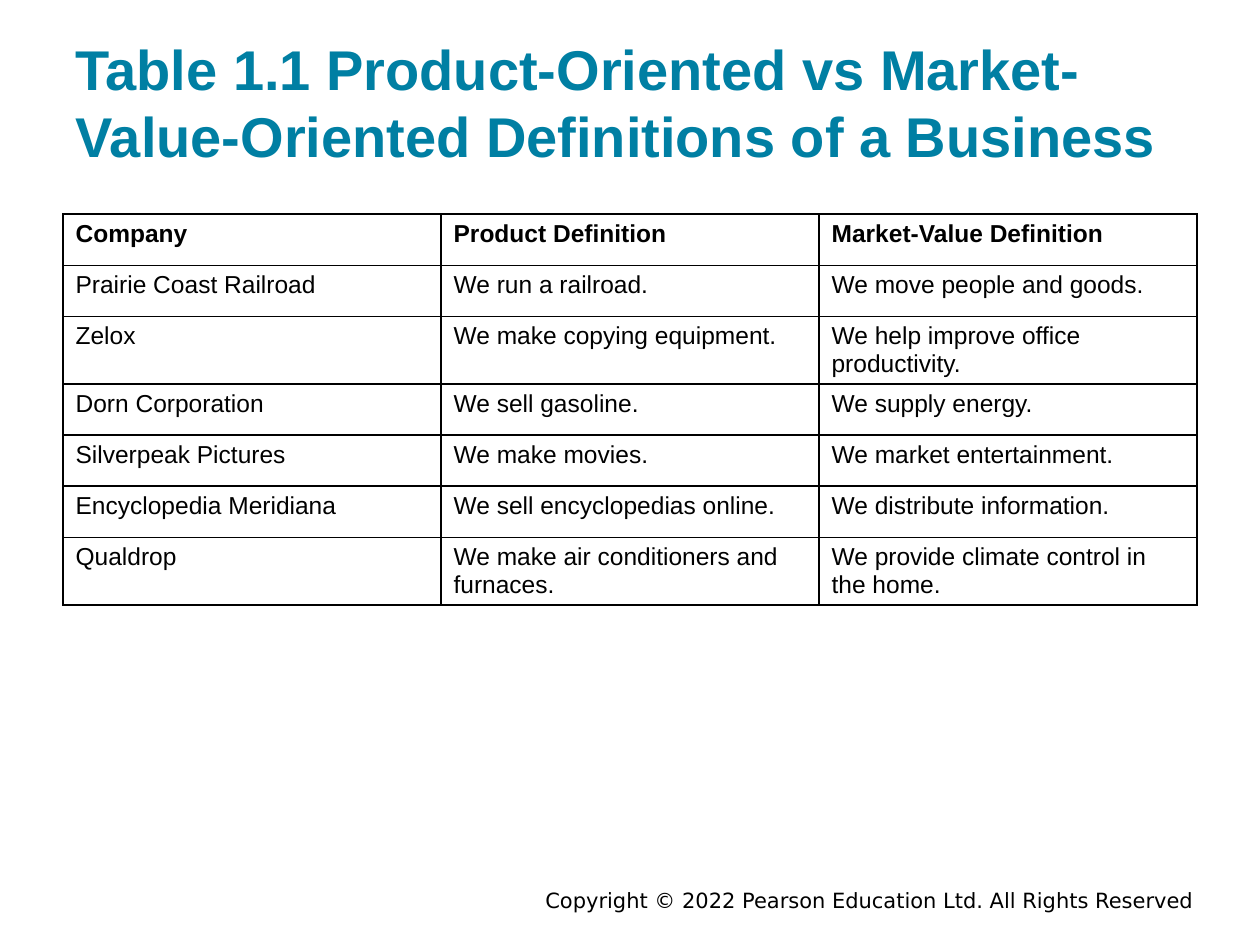
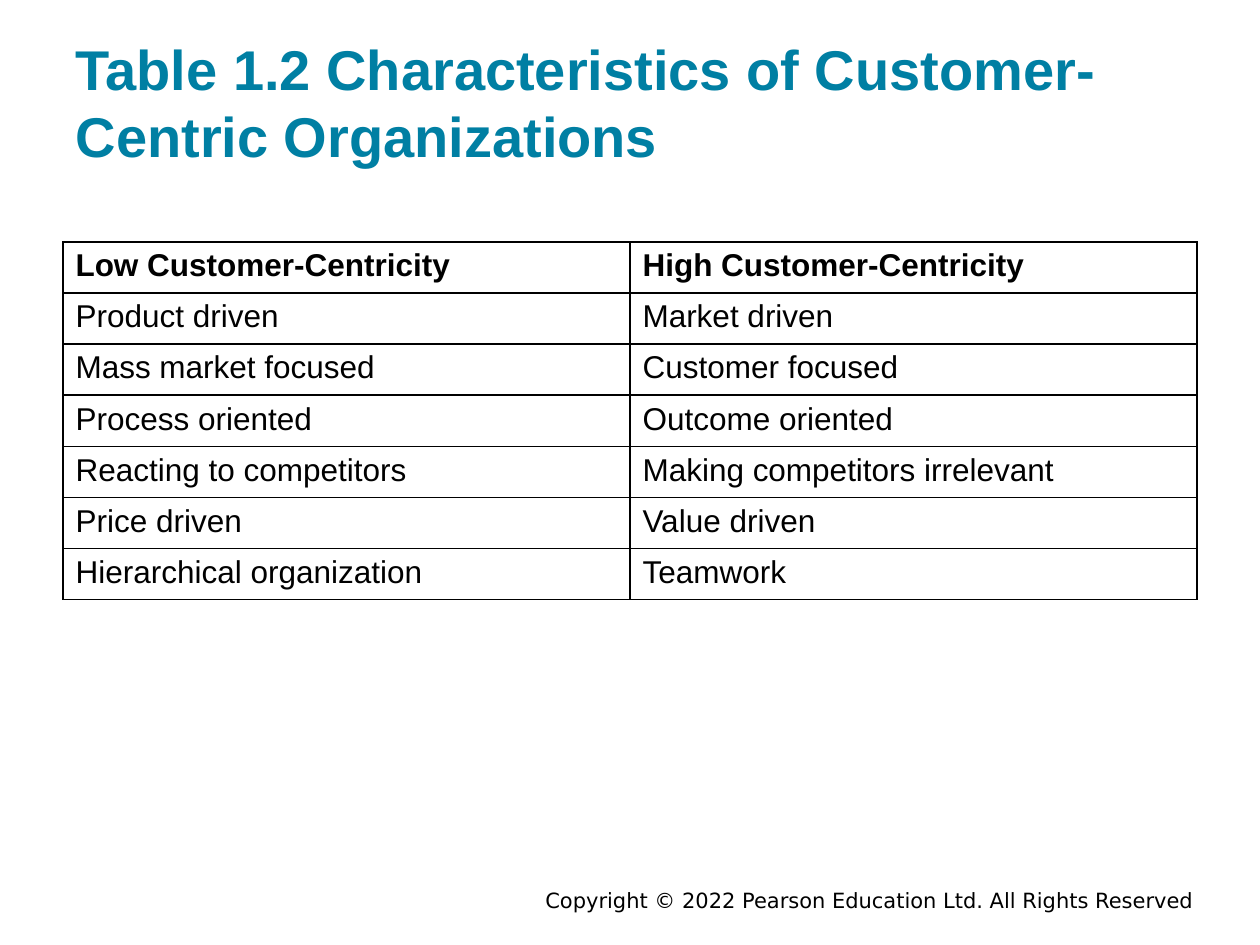
from dataclasses import dataclass
from lxml.etree import SubElement
from pptx import Presentation
from pptx.dml.color import RGBColor
from pptx.enum.text import MSO_ANCHOR, MSO_AUTO_SIZE, PP_ALIGN
from pptx.oxml.ns import qn
from pptx.util import Inches, Pt


@dataclass(frozen=True)
class Theme:
    teal: str = "007FA3"
    black: str = "000000"
    font: str = "Arial"
    foot_font: str = "DejaVu Sans"
    title: int = 32
    foot: int = 12
    rule: int = 1


theme = Theme()
LEFT, WIDE, TALL = 0.5, 9, 2.84
FOOT = "Copyright © 2022 Pearson Education Ltd. All Rights Reserved"

SLIDES = [
    dict(title="Table 1.1 Product-Oriented vs Market-Value-Oriented Definitions of a Business",
         top=1.7, size=14, rows=[
             ("Company", "Product Definition", "Market-Value Definition"),
             ("Prairie Coast Railroad", "We run a railroad.", "We move people and goods."),
             ("Zelox", "We make copying equipment.", "We help improve office productivity."),
             ("Dorn Corporation", "We sell gasoline.", "We supply energy."),
             ("Silverpeak Pictures", "We make movies.", "We market entertainment."),
             ("Encyclopedia Meridiana", "We sell encyclopedias online.",
              "We distribute information."),
             ("Qualdrop", "We make air conditioners and furnaces.",
              "We provide climate control in the home."),
         ]),
    dict(title="Table 1.2 Characteristics of Customer-Centric Organizations",
         top=1.92, size=18, rows=[
             ("Low Customer-Centricity", "High Customer-Centricity"),
             ("Product driven", "Market driven"),
             ("Mass market focused", "Customer focused"),
             ("Process oriented", "Outcome oriented"),
             ("Reacting to competitors", "Making competitors irrelevant"),
             ("Price driven", "Value driven"),
             ("Hierarchical organization", "Teamwork"),
         ]),
]


def write(frame, text, size, color=theme.black, font=theme.font, bold=False):
    """Add one left-aligned run to the first paragraph of a text frame."""
    para = frame.paragraphs[0]
    para.alignment = PP_ALIGN.LEFT
    run = para.add_run()
    run.text = text
    run.font.size, run.font.name, run.font.bold = Pt(size), font, bold
    run.font.color.rgb = RGBColor.from_string(color)


def outline(cell):
    """Rule all four sides of a table cell."""
    props = cell._tc.get_or_add_tcPr()
    for side in ("a:lnL", "a:lnR", "a:lnT", "a:lnB"):
        line = SubElement(props, qn(side), w=str(Pt(theme.rule)))
        fill = SubElement(line, qn("a:solidFill"))
        SubElement(fill, qn("a:srgbClr"), val=theme.black)


deck = Presentation()
deck.slide_width, deck.slide_height = Inches(10), Inches(7.5)
layout = deck.slide_layouts.get_by_name("Title Only")

for page in SLIDES:
    slide = deck.slides.add_slide(layout)

    foot = slide.shapes.add_textbox(Inches(4.23), Inches(7.03), Inches(5.49), Inches(0.23))
    foot.text_frame.word_wrap = True
    foot.text_frame.vertical_anchor = MSO_ANCHOR.MIDDLE
    write(foot.text_frame, FOOT, theme.foot, font=theme.foot_font)

    title = slide.shapes.title
    title.left, title.top = Inches(LEFT), Inches(0.24)
    title.width, title.height = Inches(WIDE), Inches(1.2)
    frame = title.text_frame
    frame.auto_size = MSO_AUTO_SIZE.NONE
    frame.vertical_anchor = MSO_ANCHOR.BOTTOM
    frame.margin_left = frame.margin_right = Inches(0.1)
    frame.margin_top = frame.margin_bottom = Inches(0.1)
    write(frame, page["title"], theme.title, theme.teal, bold=True)

    rows = page["rows"]
    grid = slide.shapes.add_table(
        len(rows), len(rows[0]), Inches(LEFT), Inches(page["top"]),
        Inches(WIDE), Inches(TALL)).table
    grid.first_row = grid.horz_banding = False
    for r, row in enumerate(rows):
        for c, text in enumerate(row):
            cell = grid.cell(r, c)
            outline(cell)
            cell.fill.background()
            cell.margin_bottom = Inches(0.02)
            write(cell.text_frame, text, page["size"], bold=r == 0)

deck.save("out.pptx")
